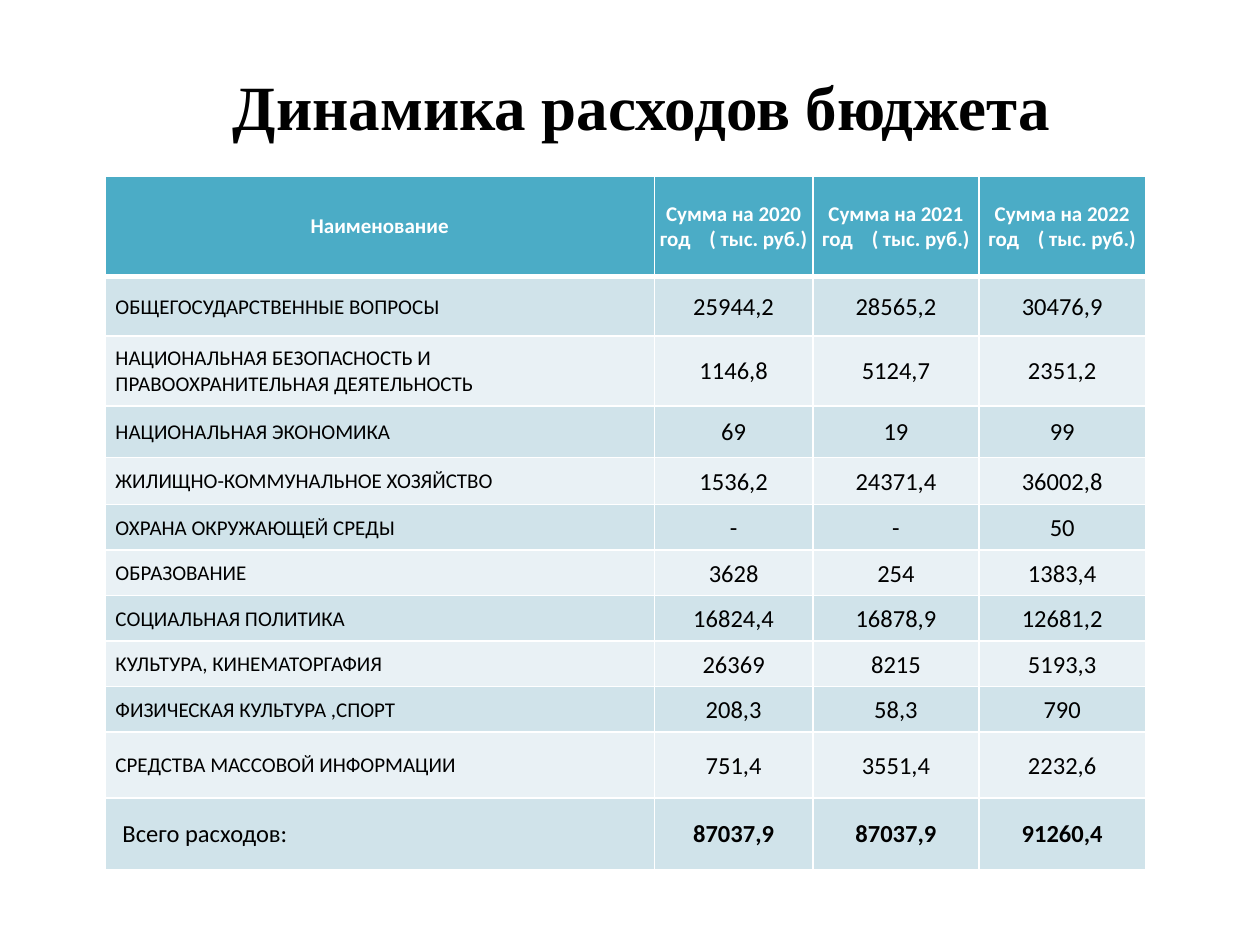
from pptx import Presentation
from pptx.dml.color import RGBColor
from pptx.enum.text import MSO_ANCHOR, PP_ALIGN
from pptx.oxml import parse_xml
from pptx.oxml.ns import nsdecls
from pptx.util import Pt


def color(hex_string):
    return RGBColor.from_string(hex_string)


def add_borders(cell, widths):
    """Draw white borders; widths maps each side (L, R, T, B) to points."""
    for side, width in widths.items():
        cell._tc.get_or_add_tcPr().append(parse_xml(
            f'<a:ln{side} {nsdecls("a")} w="{Pt(width)}"><a:solidFill>'
            f'<a:srgbClr val="FFFFFF"/></a:solidFill></a:ln{side}>'))


HEADER_FILL = "4BACC6"
BAND_FILLS = ["E9F1F5", "D0E3EA"]

rows = [
    ["Наименование"] + [f"Сумма на {year} год    ( тыс. руб.)" for year in (2020, 2021, 2022)],
    ["ОБЩЕГОСУДАРСТВЕННЫЕ ВОПРОСЫ", "25944,2", "28565,2", "30476,9"],
    ["НАЦИОНАЛЬНАЯ БЕЗОПАСНОСТЬ И\nПРАВООХРАНИТЕЛЬНАЯ ДЕЯТЕЛЬНОСТЬ", "1146,8", "5124,7", "2351,2"],
    ["НАЦИОНАЛЬНАЯ ЭКОНОМИКА", "69", "19", "99"],
    ["ЖИЛИЩНО-КОММУНАЛЬНОЕ ХОЗЯЙСТВО", "1536,2", "24371,4", "36002,8"],
    ["ОХРАНА ОКРУЖАЮЩЕЙ СРЕДЫ", "-", "-", "50"],
    ["ОБРАЗОВАНИЕ", "3628", "254", "1383,4"],
    ["СОЦИАЛЬНАЯ ПОЛИТИКА", "16824,4", "16878,9", "12681,2"],
    ["КУЛЬТУРА, КИНЕМАТОРГАФИЯ", "26369", "8215", "5193,3"],
    ["ФИЗИЧЕСКАЯ КУЛЬТУРА ,СПОРТ", "208,3", "58,3", "790"],
    ["СРЕДСТВА МАССОВОЙ ИНФОРМАЦИИ", "751,4", "3551,4", "2232,6"],
    ["Всего расходов:", "87037,9", "87037,9", "91260,4"],
]
column_widths = [314, 90.5, 95, 95]
row_heights = [57.5, 34, 40, 29.5, 27, 26, 26, 26, 26, 26, 37.5, 41]
total_row = len(rows) - 1

presentation = Presentation()
presentation.slide_width = Pt(720)
presentation.slide_height = Pt(540)
slide = presentation.slides.add_slide(presentation.slide_layouts[5])

title = slide.shapes.title
title.left, title.top, title.width, title.height = Pt(42.5), Pt(15), Pt(648), Pt(90)
title.text_frame.text = "Динамика расходов бюджета"
title.text_frame.vertical_anchor = MSO_ANCHOR.MIDDLE
paragraph = title.text_frame.paragraphs[0]
paragraph.alignment = PP_ALIGN.CENTER
paragraph.font.name = "Times New Roman"
paragraph.font.size = Pt(36)
paragraph.font.bold = True
paragraph.font.color.rgb = color("000000")

table = slide.shapes.add_table(
    len(rows), len(column_widths), Pt(60), Pt(100.5),
    Pt(sum(column_widths)), Pt(sum(row_heights))).table
table.horz_banding = False
for column, width in zip(table.columns, column_widths):
    column.width = Pt(width)

for row_index, (values, height) in enumerate(zip(rows, row_heights)):
    table.rows[row_index].height = Pt(height)
    is_header = row_index == 0
    is_total = row_index == total_row
    for column_index, value in enumerate(values):
        is_label = column_index == 0 and not is_header
        cell = table.cell(row_index, column_index)
        cell.text = value
        cell.vertical_anchor = MSO_ANCHOR.MIDDLE
        cell.margin_left = cell.margin_right = cell.margin_top = Pt(0.75)
        cell.margin_bottom = Pt(0)
        if is_label:
            cell.margin_left = Pt(10 if is_total else 6)
        add_borders(cell, {"L": 1, "R": 1, "T": 3 if row_index == 1 else 1,
                           "B": 3 if is_header else 1})
        cell.fill.solid()
        cell.fill.fore_color.rgb = color(HEADER_FILL if is_header else BAND_FILLS[row_index % 2])
        for paragraph in cell.text_frame.paragraphs:
            paragraph.alignment = PP_ALIGN.LEFT if is_label else PP_ALIGN.CENTER
            paragraph.font.name = "Calibri"
            paragraph.font.size = Pt(12 if is_header or (is_label and not is_total) else 14)
            paragraph.font.bold = is_header or (is_total and not is_label)
            paragraph.font.color.rgb = color("FFFFFF" if is_header else "000000")

presentation.save("out.pptx")
